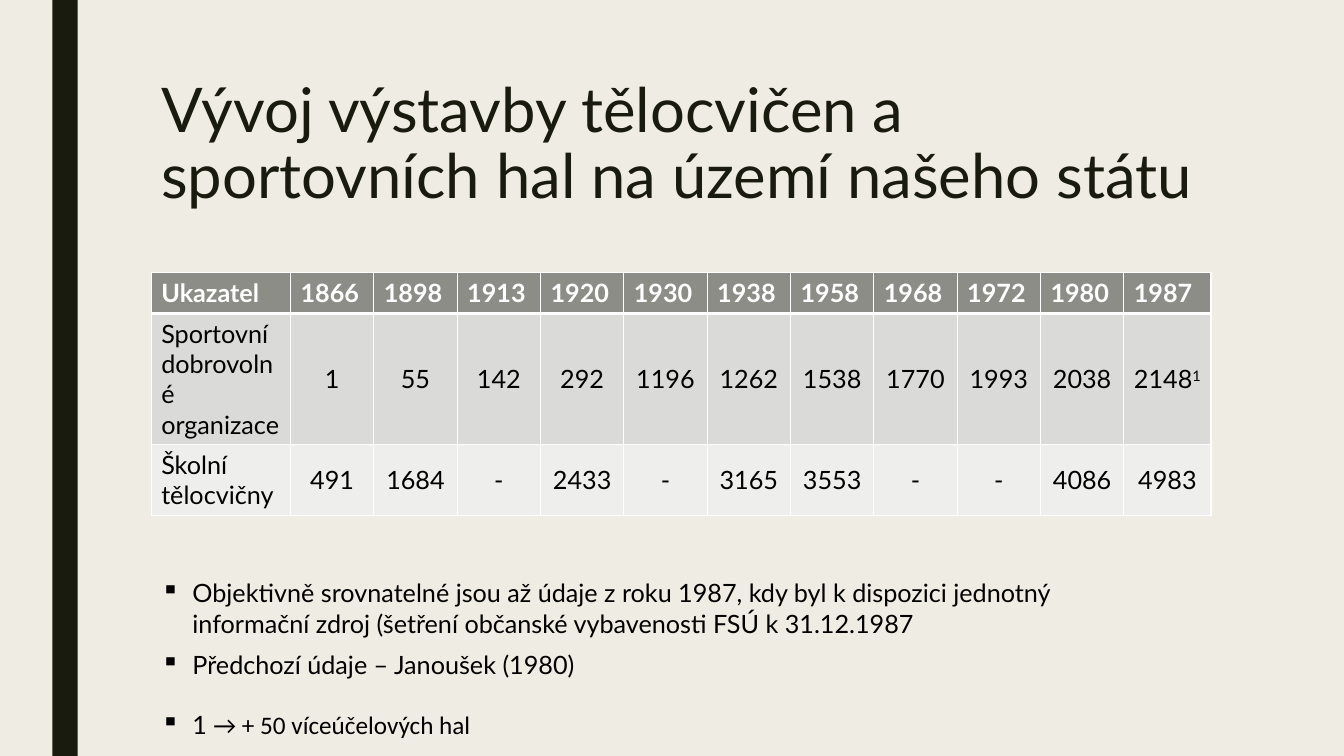
from lxml import etree
from pptx import Presentation
from pptx.dml.color import RGBColor
from pptx.enum.shapes import MSO_SHAPE
from pptx.enum.text import MSO_ANCHOR, PP_ALIGN
from pptx.oxml.ns import qn
from pptx.util import Cm, Pt

RECTANGLE = MSO_SHAPE.RECTANGLE
TOP, MIDDLE = MSO_ANCHOR.TOP, MSO_ANCHOR.MIDDLE
LEFT, CENTER = PP_ALIGN.LEFT, PP_ALIGN.CENTER

COLORS = {
    "background": "EFEDE3",
    "dark": "191B0E",
    "black": "000000",
    "white": "FFFFFF",
    "header": "8C8D86",
    "row_odd": "DADBD9",
    "row_even": "EEEEED",
}
FONT = "Lato"
MARGIN = Cm(3.81)

TITLE = "Vývoj výstavby tělocvičen a sportovních hal na území našeho státu"
TABLE_ROWS = [
    ["Ukazatel", "1866", "1898", "1913", "1920", "1930", "1938",
     "1958", "1968", "1972", "1980", "1987"],
    ["Sportovní dobrovolné organizace", "1", "55", "142", "292", "1196", "1262",
     "1538", "1770", "1993", "2038", "2148"],
    ["Školní tělocvičny", "491", "1684", "-", "2433", "-", "3165",
     "3553", "-", "-", "4086", "4983"],
]
COLUMN_WIDTHS = [3.51] + [2.1] * 10 + [2.2]
ROW_HEIGHTS = [1.04, 3.3, 1.79]
ROW_FILLS = ["header", "row_odd", "row_even"]

# Top, height and (text, font) runs of each note
NOTES = [
    (14.43, 1.8, [("Objektivně srovnatelné jsou až údaje z roku 1987, kdy byl "
                   "k dispozici jednotný informační zdroj (šetření občanské "
                   "vybavenosti FSÚ k 31.12.1987", FONT)]),
    (16.23, 1.02, [("Předchozí údaje – Janoušek (1980)", FONT)]),
    (17.75, 1.02, [("1 ", FONT), ("→ + 50 víceúčelových hal", "Calibri")]),
]


def rgb(name):
    return RGBColor.from_string(COLORS[name])


def format_run(run, size, color, bold=False, font=FONT):
    run.font.name = font
    run.font.size = Pt(size)
    run.font.bold = bold
    run.font.color.rgb = rgb(color)


def add_side_bar(slide, height):
    bar = slide.shapes.add_shape(RECTANGLE, Cm(1.32), 0, Cm(0.64), height)
    bar.shadow.inherit = False
    bar.fill.solid()
    bar.fill.fore_color.rgb = rgb("dark")
    bar.line.fill.background()


def add_text_box(slide, top, width, height):
    box = slide.shapes.add_textbox(MARGIN, Cm(top), Cm(width), Cm(height))
    box.text_frame.word_wrap = True
    box.text_frame.vertical_anchor = TOP
    return box.text_frame.paragraphs[0]


def add_title(slide):
    paragraph = add_text_box(slide, 1.9, 26.67, 4.11)
    paragraph.text = TITLE
    paragraph.line_spacing = 0.89
    format_run(paragraph.runs[0], 44, "dark")


def add_note(slide, top, height, runs):
    paragraph = add_text_box(slide, top, 24.31, height)
    for text, font in runs:
        run = paragraph.add_run()
        run.text = text
        format_run(run, 18, "black", font=font)
    # Square bullet with a hanging indent
    properties = paragraph._p.get_or_add_pPr()
    properties.set("marL", str(Cm(0.79)))
    properties.set("indent", str(-Cm(0.79)))
    bullet = etree.SubElement(properties, qn("a:buChar"))
    bullet.set("char", "▪")


def set_cell_borders(cell, widths):
    properties = cell._tc.get_or_add_tcPr()
    for side, width in widths.items():
        line = etree.SubElement(properties, qn(f"a:ln{side}"), w=str(Pt(width)))
        fill = etree.SubElement(line, qn("a:solidFill"))
        etree.SubElement(fill, qn("a:srgbClr"), val=COLORS["white"])


def fill_cell(cell, text, row, column):
    is_header = row == 0
    is_value = row > 0 and column > 0
    set_cell_borders(cell, {"L": 1, "R": 1, "T": 3 if row == 1 else 1,
                            "B": 3 if is_header else 1})
    cell.fill.solid()
    cell.fill.fore_color.rgb = rgb(ROW_FILLS[row])
    cell.vertical_anchor = MIDDLE if is_value else TOP
    cell.text_frame.text = text
    paragraph = cell.text_frame.paragraphs[0]
    paragraph.alignment = CENTER if is_value else LEFT
    format_run(paragraph.runs[0], 18, "white" if is_header else "black", is_header)


def add_footnote_mark(cell, mark):
    run = cell.text_frame.paragraphs[0].add_run()
    run.text = mark
    format_run(run, 18, "black")
    run._r.get_or_add_rPr().set("baseline", "30000")


def add_halls_table(slide):
    frame = slide.shapes.add_table(
        len(TABLE_ROWS), len(COLUMN_WIDTHS), MARGIN, Cm(6.86),
        Cm(sum(COLUMN_WIDTHS)), Cm(sum(ROW_HEIGHTS)))
    table = frame.table
    for column, width in zip(table.columns, COLUMN_WIDTHS):
        column.width = Cm(width)
    for row, height in zip(table.rows, ROW_HEIGHTS):
        row.height = Cm(height)
    for row_index, texts in enumerate(TABLE_ROWS):
        for column_index, text in enumerate(texts):
            fill_cell(table.cell(row_index, column_index), text,
                      row_index, column_index)
    add_footnote_mark(table.cell(1, len(COLUMN_WIDTHS) - 1), "1")


def main():
    presentation = Presentation()
    presentation.slide_width = Cm(33.87)
    presentation.slide_height = Cm(19.05)
    slide = presentation.slides.add_slide(presentation.slide_layouts[6])
    slide.background.fill.solid()
    slide.background.fill.fore_color.rgb = rgb("background")

    add_side_bar(slide, presentation.slide_height)
    add_title(slide)
    add_halls_table(slide)
    for top, height, runs in NOTES:
        add_note(slide, top, height, runs)

    presentation.save("out.pptx")


if __name__ == "__main__":
    main()
